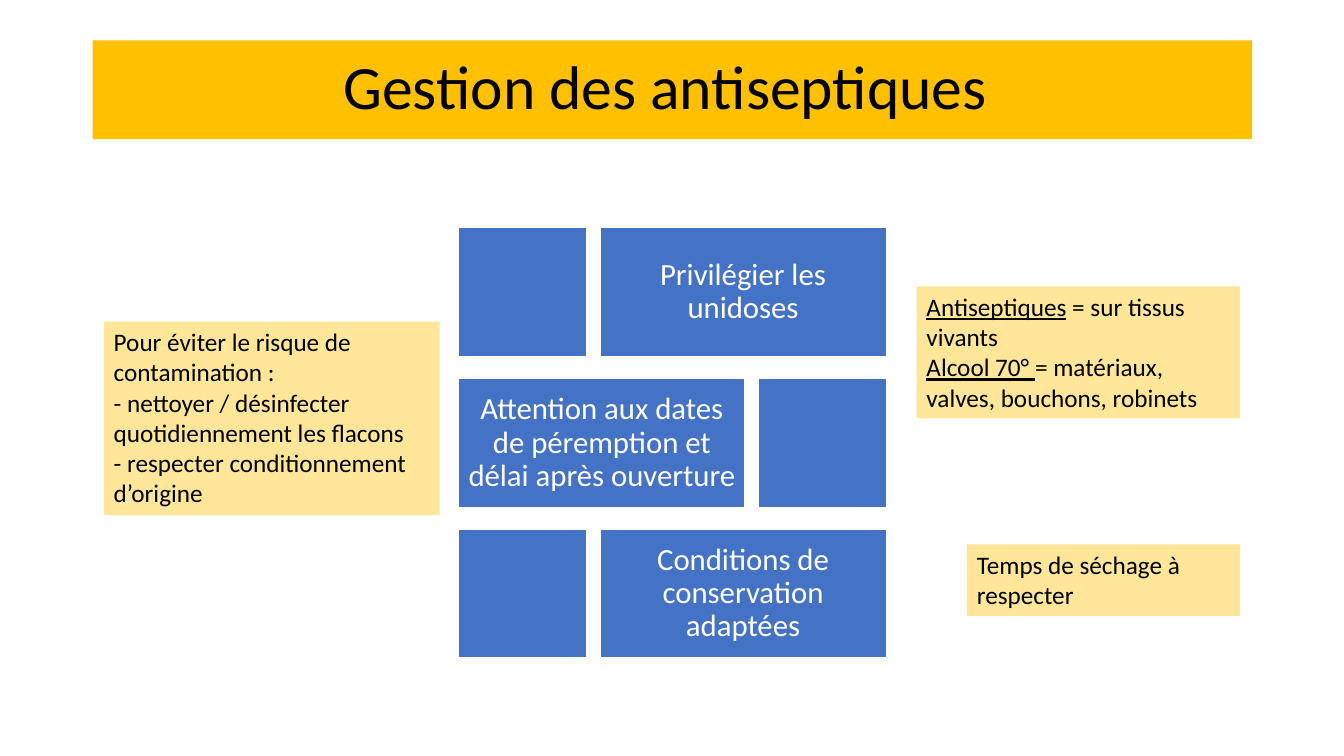
from pptx import Presentation
from pptx.dml.color import RGBColor
from pptx.enum.shapes import MSO_SHAPE
from pptx.enum.text import MSO_ANCHOR, MSO_AUTO_SIZE, PP_ALIGN
from pptx.util import Inches, Pt

COLORS = {
    "banner": "FFC000",
    "tile": "4472C4",
    "note": "FFE699",
    "white": "FFFFFF",
    "black": "000000",
}
FONT = "Calibri"

TILES = [
    ("Privilégier les unidoses", True),
    ("Attention aux dates de péremption et délai après ouverture", False),
    ("Conditions de conservation adaptées", True),
]

NOTES = [
    ((9.59, 5.4, 2.71, 0.71), [[("Temps de séchage à respecter", False)]]),
    ((9.09, 2.84, 3.21, 1.31), [
        [("Antiseptiques", True), (" = sur tissus vivants", False)],
        [("Alcool 70° ", True), ("= matériaux, valves, bouchons, robinets", False)],
    ]),
    ((1.03, 3.19, 3.33, 1.92), [
        [("Pour éviter le risque de contamination :", False)],
        [("- nettoyer / désinfecter quotidiennement les flacons", False)],
        [("- respecter conditionnement d’origine", False)],
    ]),
]


def rgb(name):
    return RGBColor.from_string(COLORS[name])


def add_box(slide, box, fill, line=None):
    sp = slide.shapes.add_shape(MSO_SHAPE.RECTANGLE, *(Inches(v) for v in box))
    sp.shadow.inherit = False
    sp.fill.solid()
    sp.fill.fore_color.rgb = rgb(fill)
    if line:
        sp.line.color.rgb = rgb(line)
        sp.line.width = Pt(1)
    else:
        sp.line.fill.background()
    return sp


def add_run(p, text, size, color, underline=False):
    r = p.add_run()
    r.text = text
    r.font.name = FONT
    r.font.size = Pt(size)
    r.font.color.rgb = rgb(color)
    r.font.underline = underline


def add_centred_text(sp, text, size, color):
    tf = sp.text_frame
    tf.word_wrap = True
    tf.vertical_anchor = MSO_ANCHOR.MIDDLE
    p = tf.paragraphs[0]
    p.alignment = PP_ALIGN.CENTER
    p.line_spacing = 0.9
    add_run(p, text, size, color)
    return tf


def add_title(slide, box):
    sp = add_box(slide, box, "banner")
    add_centred_text(sp, "Gestion des antiseptiques ", 44, "black")


def add_tiles(slide, box):
    left, top, width, height = box
    tile_h, wide, narrow = 1.28, 2.84, 1.27
    pitch = (height - tile_h) / (len(TILES) - 1)
    for i, (text, text_on_right) in enumerate(TILES):
        y = top + i * pitch
        right_of = lambda w: left + width - w
        text_x = right_of(wide) if text_on_right else left
        plain_x = left if text_on_right else right_of(narrow)
        sp = add_box(slide, (text_x, y, wide, tile_h), "tile", "white")
        tf = add_centred_text(sp, text, 22, "white")
        tf.margin_left = tf.margin_right = Inches(0.09)
        tf.margin_top = tf.margin_bottom = Inches(0.09)
        add_box(slide, (plain_x, y, narrow, tile_h), "tile", "white")


def add_note(slide, box, paragraphs):
    tf = add_box(slide, box, "note").text_frame
    tf.word_wrap = True
    tf.auto_size = MSO_AUTO_SIZE.SHAPE_TO_FIT_TEXT
    tf.vertical_anchor = MSO_ANCHOR.TOP
    for i, runs in enumerate(paragraphs):
        p = tf.add_paragraph() if i else tf.paragraphs[0]
        p.alignment = PP_ALIGN.LEFT
        for text, underline in runs:
            add_run(p, text, 18, "black", underline)


def main():
    prs = Presentation()
    prs.slide_width = Inches(13.33)
    prs.slide_height = Inches(7.5)
    slide = prs.slides.add_slide(prs.slide_layouts[6])
    add_title(slide, (0.92, 0.4, 11.5, 0.98))
    add_tiles(slide, (4.55, 2.26, 4.24, 4.27))
    for box, paragraphs in NOTES:
        add_note(slide, box, paragraphs)
    prs.save("out.pptx")


if __name__ == "__main__":
    main()
